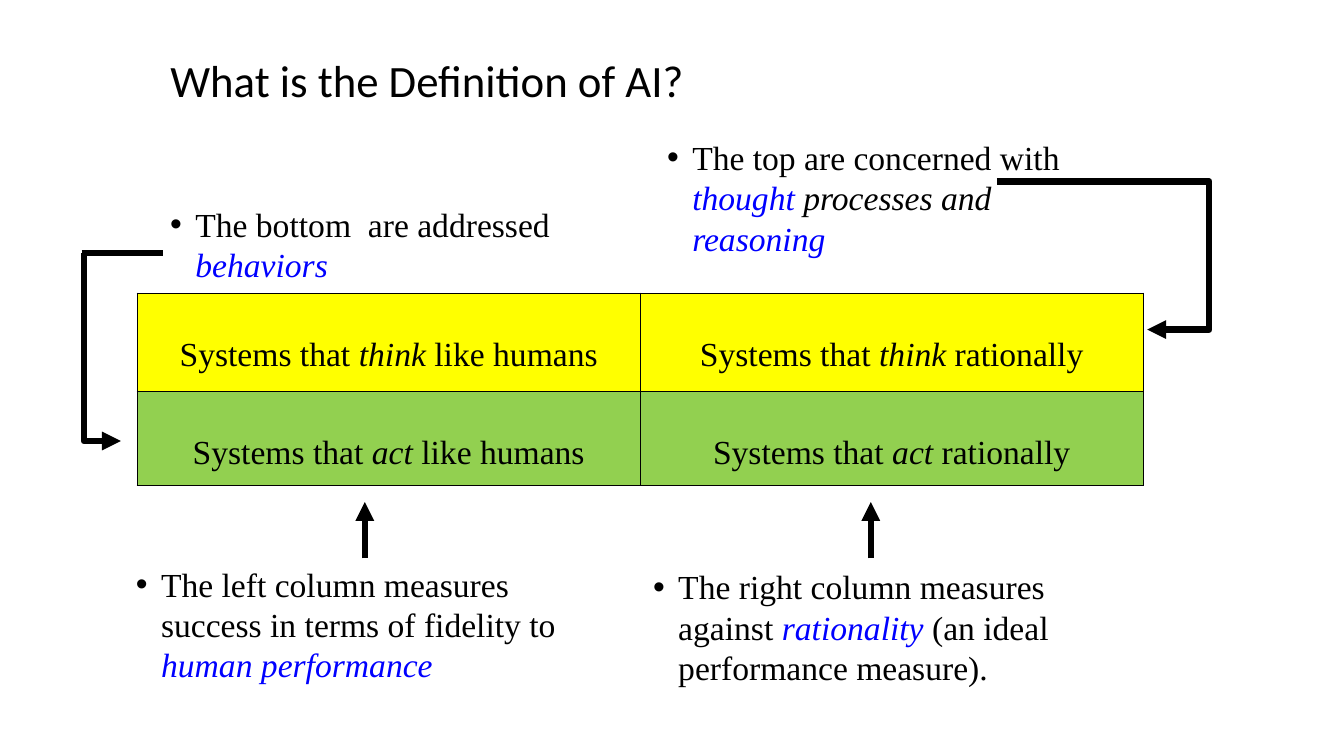
from lxml import etree
from pptx import Presentation
from pptx.dml.color import RGBColor
from pptx.enum.shapes import MSO_CONNECTOR
from pptx.enum.text import MSO_ANCHOR, MSO_AUTO_SIZE, PP_ALIGN
from pptx.oxml.ns import qn
from pptx.util import Pt

STRAIGHT, ELBOW = MSO_CONNECTOR.STRAIGHT, MSO_CONNECTOR.ELBOW
TOP, MIDDLE = MSO_ANCHOR.TOP, MSO_ANCHOR.MIDDLE
LEFT, CENTER = PP_ALIGN.LEFT, PP_ALIGN.CENTER
NO_FIT = MSO_AUTO_SIZE.NONE
BLACK = RGBColor(0x00, 0x00, 0x00)
BLUE = RGBColor(0x00, 0x00, 0xFF)
YELLOW = RGBColor(0xFF, 0xFF, 0x00)
GREEN = RGBColor(0x92, 0xD0, 0x50)


def write(para, parts):
    """Add (text, color, italic) parts to a paragraph."""
    for text, color, italic in parts:
        run = para.add_run()
        run.text = text
        font = run.font
        font.name, font.size = "Times New Roman", Pt(24)
        font.color.rgb, font.italic = color, italic


def link(kind, x1, y1, x2, y2, bend=None, arrow=True):
    """Draw a thick line; bend is the elbow's place in 1/100000 of its width."""
    line = slide.shapes.add_connector(kind, Pt(x1), Pt(y1), Pt(x2), Pt(y2))
    line.line.width = Pt(4.5)
    line.line.color.rgb = BLACK
    props = line._element.spPr
    etree.SubElement(props, qn("a:effectLst"))
    if arrow:
        etree.SubElement(props.find(qn("a:ln")), qn("a:tailEnd"), type="triangle")
    if bend is not None:
        guides = props.find(qn("a:prstGeom")).find(qn("a:avLst"))
        etree.SubElement(guides, qn("a:gd"), name="adj1", fmla=f"val {bend}")


deck = Presentation()
deck.slide_width, deck.slide_height = Pt(960), Pt(540)
slide = deck.slides.add_slide(deck.slide_layouts[5])

# Title
title = slide.shapes.title
title.left, title.top, title.width, title.height = Pt(114.5), Pt(21.6), Pt(414.7), Pt(75.6)
frame = title.text_frame
frame.text = "What is the Definition of AI?"
frame.auto_size = NO_FIT
frame.vertical_anchor = MIDDLE
para = frame.paragraphs[0]
para.alignment, para.line_spacing = LEFT, 0.9
font = para.runs[0].font
font.name, font.size, font.color.rgb = "Calibri", Pt(32), BLACK

# Table of the four approaches
table = slide.shapes.add_table(2, 2, Pt(98), Pt(209.5), Pt(718.6), Pt(137.5)).table
table.first_row = table.horz_banding = False
rows = [("think", YELLOW, 70), ("act", GREEN, 67.5)]
for r, (verb, fill, height) in enumerate(rows):
    table.rows[r].height = Pt(height)
    for c, manner in enumerate(["like humans", "rationally"]):
        cell = table.cell(r, c)
        cell.vertical_anchor = TOP
        cell.margin_top = Pt(31.2)
        para = cell.text_frame.paragraphs[0]
        para.alignment = CENTER
        write(para, [("Systems that ", BLACK, False), (verb, BLACK, True),
                     (f" {manner}", BLACK, False)])
        props = cell._tc.get_or_add_tcPr()
        for side in ("a:lnL", "a:lnR", "a:lnT", "a:lnB"):
            edge = etree.SubElement(props, qn(side), w=str(Pt(1)))
            solid = etree.SubElement(edge, qn("a:solidFill"))
            etree.SubElement(solid, qn("a:srgbClr"), val=str(BLACK))
        cell.fill.solid()
        cell.fill.fore_color.rgb = fill

# Arrows from the notes to rows and columns
for x in (260.6, 622):
    link(STRAIGHT, x, 398.9, x, 358.6)
link(ELBOW, 712, 129.6, 819.5, 235.4, bend=141200)
link(ELBOW, 59.8, 181, 86.4, 315, bend=0)
link(STRAIGHT, 58.3, 180.7, 116.6, 180.7, arrow=False)

# Bulleted notes
notes = [
    (90, 398.9, 328.3, 94.3, [
        ("The left column measures success in terms of fidelity to ", BLACK, False),
        ("human performance", BLUE, True)]),
    (459.4, 401, 328.3, 94.3, [
        ("The right column measures against ", BLACK, False),
        ("rationality", BLUE, True),
        (" (an ideal performance measure).", BLACK, False)]),
    (114.5, 141.8, 293, 65.5, [
        ("The bottom  are addressed ", BLACK, False),
        ("behaviors", BLUE, True)]),
    (469.4, 94.3, 332.6, 94.3, [
        ("The top are concerned with ", BLACK, False),
        ("thought", BLUE, True),
        (" processes and ", BLACK, True),
        ("reasoning", BLUE, True)]),
]
for x, y, width, height, parts in notes:
    frame = slide.shapes.add_textbox(Pt(x), Pt(y), Pt(width), Pt(height)).text_frame
    frame.word_wrap = True
    para = frame.paragraphs[0]
    write(para, parts)
    props = para._p.get_or_add_pPr()
    props.set("marL", str(Pt(18)))
    props.set("indent", str(-Pt(18)))
    etree.SubElement(props, qn("a:buFont"), typeface="Arial")
    etree.SubElement(props, qn("a:buChar"), char="•")

deck.save("out.pptx")
